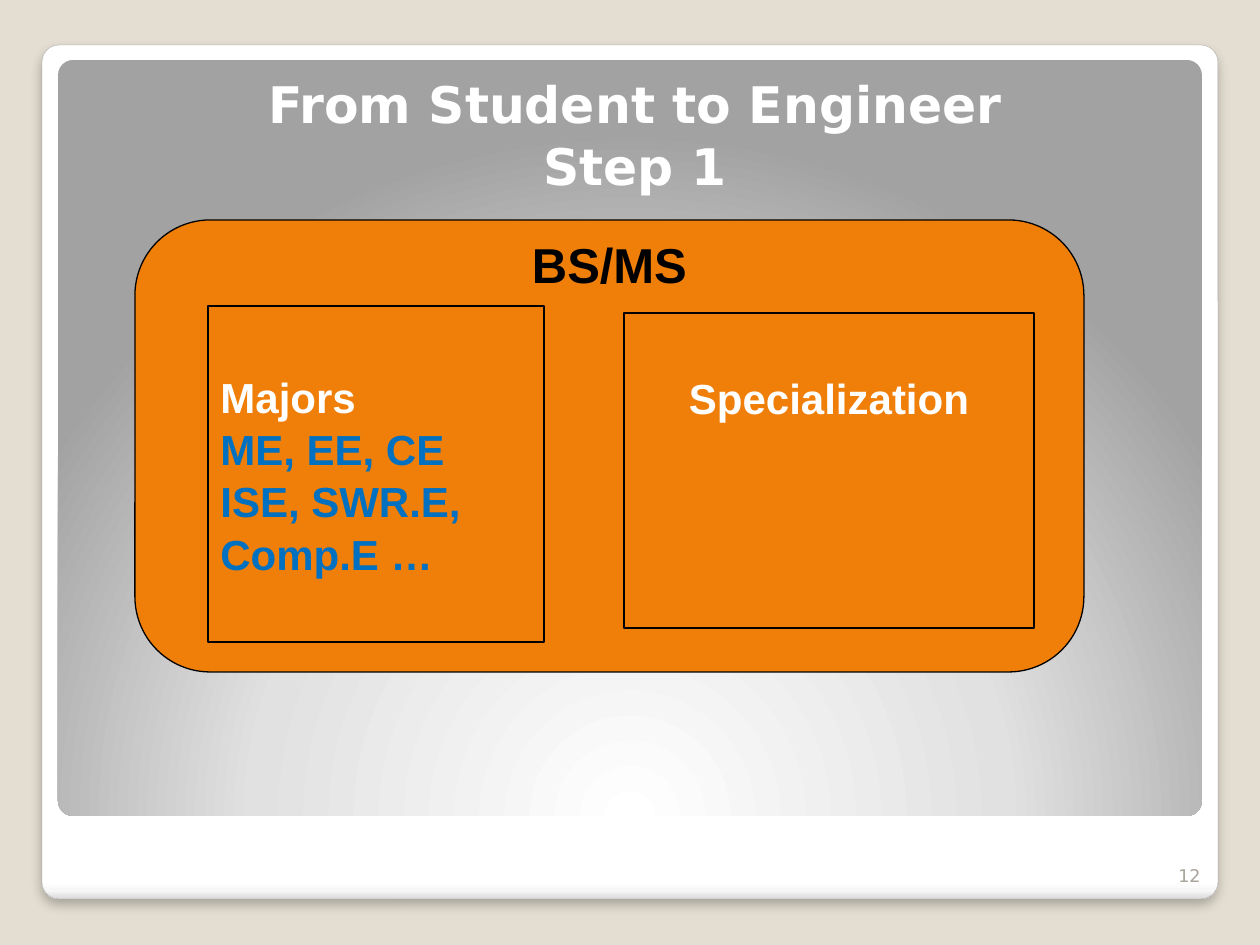
from pptx import Presentation
from pptx.dml.color import RGBColor
from pptx.enum.shapes import MSO_SHAPE
from pptx.enum.text import MSO_ANCHOR, PP_ALIGN
from pptx.oxml import parse_xml
from pptx.oxml.ns import nsdecls
from pptx.util import Pt

PX = 914400 // 126
ORANGE, BLACK, WHITE, BLUE = "F07F09", "000000", "FFFFFF", "0070C0"

CARD_STOPS = [(0, "FFFFFF"), (98, "FFFFFF"), (99, "F7F7F7"), (100, "DADADA")]
PANEL_STOPS = [(0, "FFFFFF"), (55, "E1E1E1"), (100, "A2A2A2")]
DOWNWARD = '<a:lin ang="5400000" scaled="0"/>'
FROM_BELOW = ('<a:path path="circle"><a:fillToRect l="50000" t="175000" '
              'r="50000" b="-75000"/></a:path>')
CARD_SHADOW = ('<a:effectLst {}><a:outerShdw blurRad="76200" dist="50800" dir="5400000" '
               'algn="tl" rotWithShape="0"><a:srgbClr val="000000"><a:alpha val="25000"/>'
               '</a:srgbClr></a:outerShdw></a:effectLst>')

BOXES = [
    (MSO_SHAPE.FLOWCHART_ALTERNATE_PROCESS, (135, 220, 949, 452), 366, 28, PP_ALIGN.CENTER,
     [("BS/MS", BLACK)]),
    (MSO_SHAPE.FLOWCHART_PROCESS, (208, 306, 336, 336), 0, 24, PP_ALIGN.LEFT,
     [("Majors", WHITE), ("ME, EE, CE", BLUE), ("ISE, SWR.E,", BLUE), ("Comp.E …", BLUE)]),
    (MSO_SHAPE.RECTANGLE, (624, 313, 410, 315), 147, 24, PP_ALIGN.CENTER,
     [("Specialization", WHITE)]),
]
LABELS = [
    ((63, 70, 1144, 129), 3, 28.8, PP_ALIGN.CENTER, True,
     [("From Student to Engineer\vStep 1", WHITE)]),
    ((1150, 842, 63, 50), 6, 10, PP_ALIGN.RIGHT, False, [("12", "A8A49B")]),
]


def color(value):
    """Turn a hex string into a colour."""
    return RGBColor.from_string(value)


def scaled(bounds):
    """Turn px bounds into EMU."""
    return [value * PX for value in bounds]


def write(shape, lines, font, size, bold, align, anchor, bottom):
    """Fill a shape with coloured lines of text."""
    frame = shape.text_frame
    frame.text = "\n".join(text for text, _ in lines)
    frame.word_wrap = True
    frame.vertical_anchor = anchor
    frame.margin_top, frame.margin_bottom = 0, bottom * PX
    for para, (_, value) in zip(frame.paragraphs, lines):
        para.alignment = align
        para.line_spacing = 1.04
        for span in para.runs:
            span.font.name, span.font.size, span.font.bold = font, Pt(size), bold
            span.font.color.rgb = color(value)


def add_backdrop(page, bounds, stops, direction):
    """Add a rounded rectangle with a gradient fill."""
    shape = page.shapes.add_shape(MSO_SHAPE.ROUNDED_RECTANGLE, *scaled(bounds))
    shape.adjustments[0] = 0.02
    shape.shadow.inherit = False
    shape.line.fill.background()
    marks = "".join(f'<a:gs pos="{place * 1000}"><a:srgbClr val="{value}"/></a:gs>'
                    for place, value in stops)
    gradient = parse_xml(f'<a:gradFill {nsdecls("a")} rotWithShape="1">'
                         f'<a:gsLst>{marks}</a:gsLst>{direction}</a:gradFill>')
    shape.element.spPr.insert(2, gradient)
    return shape


def main():
    """Build the slide."""
    deck = Presentation()
    deck.slide_width, deck.slide_height = scaled((1260, 945))
    page = deck.slides.add_slide(deck.slide_layouts[6])
    page.background.fill.solid()
    page.background.fill.fore_color.rgb = color("E3DED1")

    card = add_backdrop(page, (42, 45, 1176, 854), CARD_STOPS, DOWNWARD)
    card.line.color.rgb = color("A4A4A4")
    card.line.width = Pt(0.16)
    properties = card.element.spPr
    properties.replace(properties[-1], parse_xml(CARD_SHADOW.format(nsdecls("a"))))
    add_backdrop(page, (58, 60, 1144, 756), PANEL_STOPS, FROM_BELOW)

    for bounds, bottom, size, align, bold, lines in LABELS:
        box = page.shapes.add_textbox(*scaled(bounds))
        write(box, lines, "DejaVu Sans", size, bold, align, MSO_ANCHOR.BOTTOM, bottom)

    for kind, bounds, bottom, size, align, lines in BOXES:
        box = page.shapes.add_shape(kind, *scaled(bounds))
        box.shadow.inherit = False
        box.fill.solid()
        box.fill.fore_color.rgb = color(ORANGE)
        box.line.color.rgb = color(BLACK)
        box.line.width = Pt(0.75)
        write(box, lines, "Arial", size, True, align, MSO_ANCHOR.MIDDLE, bottom)

    deck.save("out.pptx")


if __name__ == "__main__":
    main()
